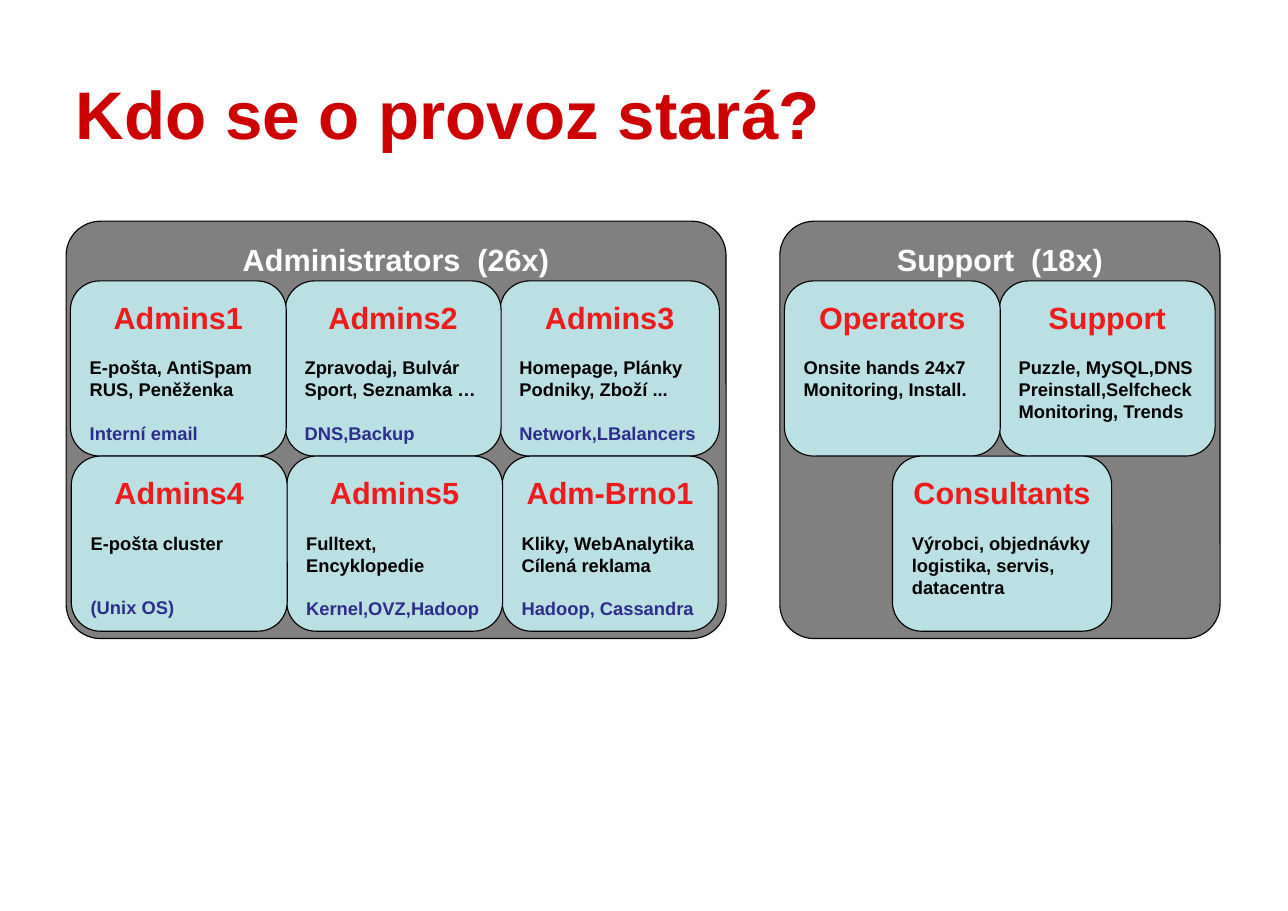
from dataclasses import dataclass

from pptx import Presentation
from pptx.dml.color import RGBColor
from pptx.enum.shapes import MSO_SHAPE
from pptx.enum.text import MSO_ANCHOR, PP_ALIGN
from pptx.shapes.autoshape import Shape
from pptx.slide import Slide
from pptx.text.text import TextFrame
from pptx.util import Pt

ROUNDED = MSO_SHAPE.ROUNDED_RECTANGLE
TOP, MIDDLE = MSO_ANCHOR.TOP, MSO_ANCHOR.MIDDLE
LEFT, CENTER = PP_ALIGN.LEFT, PP_ALIGN.CENTER

FONT = "Arial"
RED, HEADING_RED = "CC0000", "ED1B1B"
GREY, TEAL, WHITE, BLACK, NAVY = "808080", "BBE0E3", "FFFFFF", "000000", "2D2D8A"
LINE = 13.8  # height of a 12 pt line
BODY_LINES = 3  # lines above a card's footer
PANEL_TOP, PANEL_HEIGHT = 144.6, 272.8
CARD_HEIGHT = 114.5
ROW_TOPS = (183.6, 298.1)


@dataclass
class Team:
    name: str
    duties: tuple[str, ...]
    footer: str = ""
    width: float = 141.1


@dataclass
class Row:
    left: float
    pitch: float
    teams: tuple[Team, ...]


@dataclass
class Panel:
    heading: str
    left: float
    width: float
    rows: tuple[Row, Row]


PANELS = (
    Panel("Administrators  (26x)", 43.2, 431.3, (
        Row(46, 140.4, (
            Team("Admins1", ("E-pošta, AntiSpam", "RUS, Peněženka"), "Interní email"),
            Team("Admins2", ("Zpravodaj, Bulvár", "Sport, Seznamka …"), "DNS,Backup"),
            Team("Admins3", ("Homepage, Plánky", "Podniky, Zboží ..."),
                 "Network,LBalancers", 143.3),
        )),
        Row(46.6, 140.8, (
            Team("Admins4", ("E-pošta cluster",), "(Unix OS)"),
            Team("Admins5", ("Fulltext,", "Encyklopedie"), "Kernel,OVZ,Hadoop"),
            Team("Adm-Brno1", ("Kliky, WebAnalytika", "Cílená reklama"),
                 "Hadoop, Cassandra"),
        )),
    )),
    Panel("Support  (18x)", 509.6, 287.7, (
        Row(512.6, 140.4, (
            Team("Operators", ("Onsite hands 24x7", "Monitoring, Install.")),
            Team("Support", ("Puzzle, MySQL,DNS", "Preinstall,Selfcheck",
                             "Monitoring, Trends")),
        )),
        Row(583.2, 140.4, (
            Team("Consultants", ("Výrobci, objednávky", "logistika, servis,",
                                 "datacentra"), width=143.3),
        )),
    )),
)


def color(value: str) -> RGBColor:
    return RGBColor.from_string(value)


def add_line(tf: TextFrame, text: str, size: float, ink: str,
             align: PP_ALIGN = LEFT, before: float = 0) -> None:
    """Fill the empty first paragraph, or append another one."""
    p = tf.paragraphs[0] if not tf.text else tf.add_paragraph()
    p.text = text
    p.alignment = align
    if before:
        p.space_before = Pt(before)
    p.font.name = FONT
    p.font.size = Pt(size)
    p.font.bold = True
    p.font.color.rgb = color(ink)


def add_box(s: Slide, left: float, top: float, width: float, height: float,
            fill: str) -> Shape:
    sp = s.shapes.add_shape(ROUNDED, Pt(left), Pt(top), Pt(width), Pt(height))
    sp.shadow.inherit = False
    sp.fill.solid()
    sp.fill.fore_color.rgb = color(fill)
    sp.line.color.rgb = color(BLACK)
    sp.line.width = Pt(0.75)
    tf = sp.text_frame
    tf.word_wrap = True
    tf.vertical_anchor = TOP
    tf.margin_top = Pt(6)
    return sp


def add_card(s: Slide, team: Team, left: float, top: float) -> None:
    tf = add_box(s, left, top, team.width, CARD_HEIGHT, TEAL).text_frame
    add_line(tf, team.name, 20, HEADING_RED, CENTER)
    for i, duty in enumerate(team.duties):
        add_line(tf, duty, 12, BLACK, before=0 if i else LINE)
    if team.footer:
        gap = LINE * (BODY_LINES - len(team.duties))
        add_line(tf, team.footer, 12, NAVY, before=gap)


def add_panel(s: Slide, panel: Panel) -> None:
    sp = add_box(s, panel.left, PANEL_TOP, panel.width, PANEL_HEIGHT, GREY)
    sp.adjustments[0] = 0.082
    add_line(sp.text_frame, panel.heading, 20, WHITE, CENTER)
    for row, top in zip(panel.rows, ROW_TOPS):
        for i, team in reversed(list(enumerate(row.teams))):
            add_card(s, team, row.left + i * row.pitch, top)


def add_title(s: Slide, text: str) -> None:
    tf = s.shapes.add_textbox(Pt(42.5), Pt(23.8), Pt(757.4), Pt(99.4)).text_frame
    tf.word_wrap = True
    tf.vertical_anchor = MIDDLE
    add_line(tf, text, 44, RED)


def main() -> None:
    prs = Presentation()
    prs.slide_width, prs.slide_height = Pt(841.68), Pt(595.44)
    s = prs.slides.add_slide(prs.slide_layouts[6])
    add_title(s, "Kdo se o provoz stará?")
    for panel in PANELS:
        add_panel(s, panel)
    prs.save("out.pptx")


if __name__ == "__main__":
    main()
